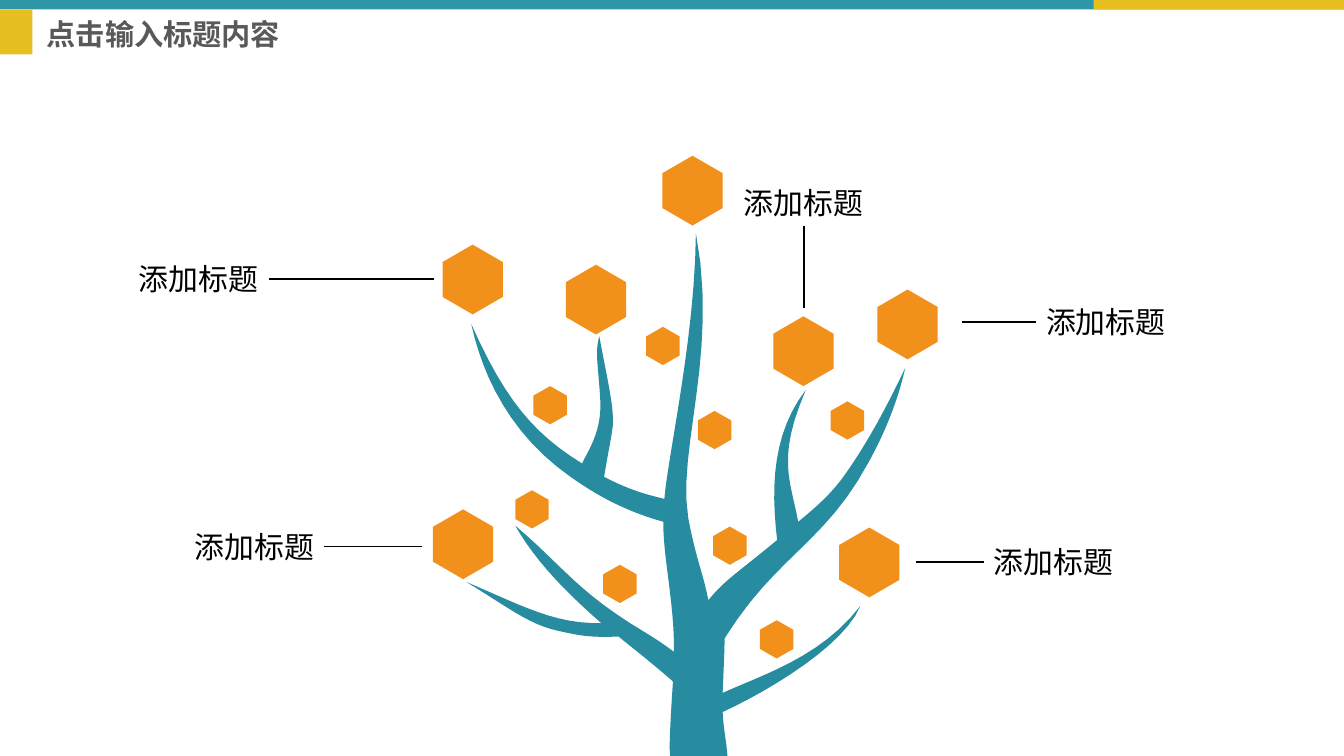
from pptx import Presentation
from pptx import util as u
from pptx.dml.color import RGBColor
from pptx.enum import shapes, text
from pptx.oxml import parse_xml
from pptx.oxml.ns import nsdecls

FONT = "Roboto Condensed"
TEAL, YELLOW, TREE, ORANGE = "2F96A8", "E6C020", "278CA0", "F2901C"
BLACK, GREY = "000000", "595959"

# All places are on a grid whose unit is 2.54 cm.
WIDTH, HEIGHT = 14.06, 7.91
TITLE = "点击输入标题内容"
TITLE_BOX = (0.39, 0.14, 3.62, 0.47)
BARS = [
    ((0, 0, WIDTH, 0.1), TEAL),
    ((11.44, 0, 2.62, 0.1), YELLOW),
    ((0, 0.1, 0.34, 0.47), YELLOW),
]

# Label text, left, top, connected side, length of the pointer line
TOP, LEFT, BOTTOM, RIGHT = range(4)
LABEL_SIZE = (1.46, 0.48)
LABELS = [
    ("添加标题", 10.84, 3.13, LEFT, 0.78),
    ("添加标题", 10.29, 5.64, LEFT, 0.71),
    ("添加标题", 1.35, 2.68, RIGHT, 1.73),
    ("添加标题", 7.68, 1.88, BOTTOM, 0.86),
    ("添加标题", 1.93, 5.48, RIGHT, 1.02),
]
DIRECTIONS = {TOP: (0, -1), LEFT: (-1, 0), BOTTOM: (0, 1), RIGHT: (1, 0)}

# Left and top of the fruits, by fruit size
FRUITS = {
    (0.63, 0.73): [(4.63, 2.56), (6.93, 1.63), (9.18, 3.03), (8.78, 5.52),
                   (5.92, 2.77), (4.53, 5.33), (8.09, 3.31)],
    (0.35, 0.4): [(7.95, 6.49), (5.58, 4.04), (6.76, 3.42), (7.46, 5.51),
                  (5.39, 5.13), (8.69, 4.2), (6.31, 5.91), (7.3, 4.3)],
}
HEXAGON = [(0.5, 0), (1, 0.25), (1, 0.75), (0.5, 1), (0, 0.75), (0, 0.25)]

# Each curve: two control points and the end point
TREE_START = (7.61, HEIGHT)
TREE_CURVES = [
    ((7.04, HEIGHT), (7.04, HEIGHT), (7.01, HEIGHT)),
    ((7, 7.8), (7.01, 7.6), (7.04, 7.13)),
    ((6.87, 6.98), (6.67, 6.82), (6.47, 6.66)),
    ((6.24, 6.67), (6.11, 6.66), (5.93, 6.62)),
    ((5.55, 6.55), (5.42, 6.42), (4.88, 6.09)),
    ((5.47, 6.34), (5.8, 6.53), (6.29, 6.52)),
    ((5.95, 6.22), (5.62, 5.9), (5.39, 5.5)),
    ((5.92, 5.95), (6.03, 6.19), (6.77, 6.63)),
    ((6.85, 6.68), (6.93, 6.73), (7.05, 6.82)),
    ((7.06, 6.34), (6.93, 5.79), (6.94, 5.46)),
    ((6.51, 5.34), (6.21, 5.16), (5.97, 4.99)),
    ((5.34, 4.55), (5.05, 3.94), (4.93, 3.39)),
    ((5.29, 4.2), (5.59, 4.54), (6.09, 4.85)),
    ((6.13, 4.75), (6.3, 4.53), (6.28, 4.19)),
    ((6.26, 3.82), (6.22, 3.69), (6.27, 3.52)),
    ((6.34, 3.91), (6.43, 4.27), (6.41, 4.46)),
    ((6.39, 4.62), (6.37, 4.68), (6.32, 4.99)),
    ((6.61, 5.14), (6.79, 5.18), (6.95, 5.22)),
    ((6.99, 4.75), (7.27, 3.54), (7.28, 2.44)),
    ((7.52, 3.7), (7.08, 4.7), (7.2, 5.42)),
    ((7.28, 5.85), (7.36, 6.01), (7.41, 6.28)),
    ((7.59, 6.06), (7.71, 6), (8.13, 5.65)),
    ((8.06, 5.07), (8.09, 4.52), (8.43, 4.08)),
    ((8.12, 4.8), (8.27, 5.02), (8.35, 5.46)),
    ((8.57, 5.28), (8.72, 5.14), (8.85, 4.95)),
    ((9, 4.74), (9.22, 4.38), (9.47, 3.85)),
    ((9.39, 4.21), (9.24, 4.56), (9.09, 4.83)),
    ((8.63, 5.69), (8.12, 5.81), (7.58, 6.68)),
    ((7.58, 6.8), (7.57, 7.01), (7.56, 7.25)),
    ((7.95, 7.07), (8.59, 6.88), (9, 6.34)),
    ((8.84, 6.74), (8.08, 7.21), (7.56, 7.45)),
    ((7.57, 7.65), (7.6, 7.75), TREE_START),
]
CURVE_STEPS = 12


def grid(*values):
    """Turn grid units into lengths."""
    return [u.Cm(2.54 * value) for value in values]


def color(value):
    return RGBColor.from_string(value)


def paint(shape, fill):
    shape.shadow.inherit = False
    shape.fill.solid()
    shape.fill.fore_color.rgb = color(fill)
    shape.line.fill.background()


def add_outline(slide, points, fill):
    start, *others = [grid(*point) for point in points]
    builder = slide.shapes.build_freeform(*start)
    builder.add_line_segments(others, close=True)
    paint(builder.convert_to_shape(), fill)


def curve_points(start, curves):
    """Return points along a chain of cubic Bezier curves."""
    points = [start]
    for first, second, end in curves:
        for step in range(1, CURVE_STEPS + 1):
            t = step / CURVE_STEPS
            weights = ((1 - t) ** 3, 3 * t * (1 - t) ** 2, 3 * t * t * (1 - t), t ** 3)
            points.append(tuple(
                sum(weight * place for weight, place in zip(weights, places))
                for places in zip(start, first, second, end)))
        start = end
    return points


def write(frame, content, size, fill, bold=False):
    frame.text = content
    font = frame.paragraphs[0].runs[0].font
    font.name, font.size, font.bold = FONT, u.Pt(size), bold
    font.color.rgb = color(fill)
    return frame.paragraphs[0]


def add_title(slide):
    title = slide.shapes.title
    title.left, title.top, title.width, title.height = grid(*TITLE_BOX)
    frame = title.text_frame
    paragraph = write(frame, TITLE, 22, GREY, bold=True)
    paragraph.alignment = text.PP_ALIGN.LEFT
    paragraph.line_spacing = 0.9
    paragraph.space_before = u.Pt(10)
    frame.vertical_anchor = text.MSO_ANCHOR.MIDDLE
    frame.auto_size = text.MSO_AUTO_SIZE.NONE


def add_label(slide, content, left, top, side, length):
    """Add a label and the line that points from its side to a fruit."""
    width, height = LABEL_SIZE
    label = slide.shapes.add_textbox(*grid(left, top, width, height))
    frame = label.text_frame
    write(frame, content, 22.5, BLACK).alignment = text.PP_ALIGN.CENTER
    frame.word_wrap = False
    frame.auto_size = text.MSO_AUTO_SIZE.SHAPE_TO_FIT_TEXT

    dx, dy = DIRECTIONS[side]
    x = left + width / 2 * (1 + dx)
    y = top + height / 2 * (1 + dy)
    line = slide.shapes.add_connector(
        shapes.MSO_CONNECTOR.STRAIGHT, *grid(x, y, x + dx * length, y + dy * length))
    line.begin_connect(label, side)
    line.line.color.rgb = color(BLACK)
    line.line.width = u.Pt(1)
    line._element.spPr.append(parse_xml(f"<a:effectLst {nsdecls('a')}/>"))


def main():
    presentation = Presentation()
    presentation.slide_width, presentation.slide_height = grid(WIDTH, HEIGHT)
    slide = presentation.slides.add_slide(presentation.slide_layouts[5])
    for box, fill in BARS:
        paint(slide.shapes.add_shape(shapes.MSO_SHAPE.RECTANGLE, *grid(*box)), fill)
    add_title(slide)
    add_outline(slide, curve_points(TREE_START, TREE_CURVES), TREE)
    for (width, height), places in FRUITS.items():
        for left, top in places:
            corners = [(left + x * width, top + y * height) for x, y in HEXAGON]
            add_outline(slide, corners, ORANGE)
    for label in LABELS:
        add_label(slide, *label)
    presentation.save("out.pptx")


if __name__ == "__main__":
    main()
